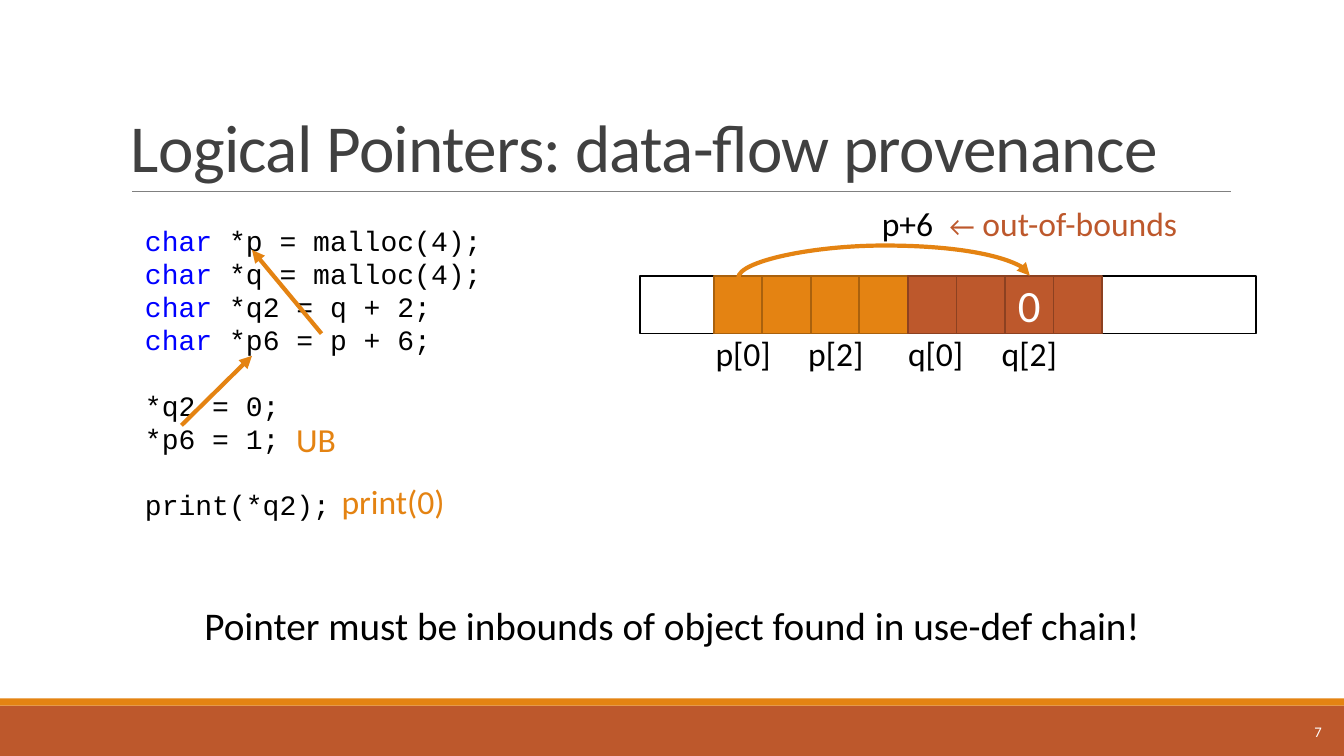
from dataclasses import dataclass

from lxml import etree
from pptx import Presentation
from pptx.dml.color import RGBColor
from pptx.enum.shapes import MSO_CONNECTOR, MSO_SHAPE
from pptx.enum.text import MSO_ANCHOR, PP_ALIGN
from pptx.oxml.ns import qn
from pptx.util import Inches, Pt

RECTANGLE = MSO_SHAPE.RECTANGLE
STRAIGHT, CURVE = MSO_CONNECTOR.STRAIGHT, MSO_CONNECTOR.CURVE
TOP, MIDDLE, BOTTOM = MSO_ANCHOR.TOP, MSO_ANCHOR.MIDDLE, MSO_ANCHOR.BOTTOM
LEFT, CENTER, RIGHT = PP_ALIGN.LEFT, PP_ALIGN.CENTER, PP_ALIGN.RIGHT

COLUMNS, ROWS = 160, 90


@dataclass(frozen=True)
class Theme:
    sans: str = "Calibri"
    mono: str = "Courier New"
    black: str = "000000"
    white: str = "FFFFFF"
    heading: str = "404040"
    rule: str = "808080"
    keyword: str = "0000FF"
    orange: str = "E48312"
    orange_edge: str = "A9610D"
    rust: str = "BD582C"
    rust_edge: str = "8C4121"
    title_size: float = 48
    value_size: float = 32
    message_size: float = 28
    label_size: float = 24
    code_size: float = 20
    number_size: float = 10.5
    code_line: float = 21.6
    code_gap: float = 2


THEME = Theme()


@dataclass(frozen=True)
class Span:
    text: str
    size: float = THEME.label_size
    color: str = THEME.black
    font: str = THEME.sans


@dataclass(frozen=True)
class Area:
    column: float
    row: float
    width: float
    height: float


@dataclass(frozen=True)
class Label:
    area: Area
    spans: tuple[Span, ...]
    wrap: bool = False
    anchor: MSO_ANCHOR = TOP
    align: PP_ALIGN = LEFT


@dataclass(frozen=True)
class Block:
    area: Area
    fill: str
    edge: str | None = None
    value: str = ""


@dataclass(frozen=True)
class Line:
    begin: tuple[float, float]
    end: tuple[float, float]
    color: str = THEME.orange
    weight: float = 3
    arrow: bool = True
    kind: MSO_CONNECTOR = STRAIGHT


@dataclass(frozen=True)
class CodeLine:
    keyword: str
    rest: str
    blank_after: bool = False


deck = Presentation()
deck.slide_width, deck.slide_height = Inches(13.33), Inches(7.5)
page = deck.slides.add_slide(deck.slide_layouts[6])


def across(columns: float) -> int:
    return round(deck.slide_width * columns / COLUMNS)


def down(rows: float) -> int:
    return round(deck.slide_height * rows / ROWS)


def place(area: Area) -> tuple[int, int, int, int]:
    return across(area.column), down(area.row), across(area.width), down(area.height)


def add_span(para, span: Span):
    run = para.add_run()
    run.text = span.text
    run.font.name = span.font
    run.font.size = Pt(span.size)
    run.font.color.rgb = RGBColor.from_string(span.color)
    return run


def draw_label(label: Label):
    box = page.shapes.add_textbox(*place(label.area))
    frame = box.text_frame
    frame.word_wrap = label.wrap
    frame.vertical_anchor = label.anchor
    para = frame.paragraphs[0]
    para.alignment = label.align
    for span in label.spans:
        add_span(para, span)
    return box


def draw_block(block: Block) -> None:
    box = page.shapes.add_shape(RECTANGLE, *place(block.area))
    box.shadow.inherit = False
    box.fill.solid()
    box.fill.fore_color.rgb = RGBColor.from_string(block.fill)
    if block.edge:
        box.line.color.rgb = RGBColor.from_string(block.edge)
        box.line.width = Pt(1.25)
    else:
        box.line.fill.background()
    if block.value:
        frame = box.text_frame
        frame.margin_left = frame.margin_right = 0
        frame.margin_top = frame.margin_bottom = 0
        frame.vertical_anchor = MIDDLE
        frame.paragraphs[0].alignment = CENTER
        add_span(frame.paragraphs[0], Span(block.value, THEME.value_size, THEME.white))


def draw_line(line: Line):
    connector = page.shapes.add_connector(
        line.kind, across(line.begin[0]), down(line.begin[1]),
        across(line.end[0]), down(line.end[1]))
    connector.line.color.rgb = RGBColor.from_string(line.color)
    connector.line.width = Pt(line.weight)
    properties = connector._element.spPr
    if line.arrow:
        etree.SubElement(properties.find(qn("a:ln")), qn("a:tailEnd"), type="triangle")
    etree.SubElement(properties, qn("a:effectLst"))
    return connector


def draw_jump(line: Line, bend: int) -> None:
    properties = draw_line(line)._element.spPr
    properties.find(qn("a:xfrm")).set("rot", "5400000")
    guides = properties.find(qn("a:prstGeom")).find(qn("a:avLst"))
    etree.SubElement(guides, qn("a:gd"), name="adj1", fmla=f"val {bend}")


def draw_code(area: Area, lines: tuple[CodeLine, ...]) -> None:
    frame = page.shapes.add_textbox(*place(area)).text_frame
    frame.word_wrap = True
    for index, line in enumerate(lines):
        para = frame.add_paragraph() if index else frame.paragraphs[0]
        skipped = THEME.code_line + THEME.code_gap if line.blank_after else 0
        para.line_spacing = Pt(THEME.code_line)
        para.space_after = Pt(THEME.code_gap + skipped)
        for text, color in ((line.keyword, THEME.keyword), (line.rest, THEME.black)):
            if text:
                add_span(para, Span(text, THEME.code_size, color, THEME.mono))


def main() -> None:
    draw_block(Block(Area(0, 84, COLUMNS, 6), THEME.rust))
    draw_block(Block(Area(0, 83.16, COLUMNS, 0.84), THEME.orange))
    draw_line(Line((15.72, 22.8), (146.52, 22.8), THEME.rule, 0.5, False))

    heading = Span("Logical Pointers: data-flow provenance", THEME.title_size, THEME.heading)
    title = draw_label(Label(Area(14.4, 3.72, 132, 19.08), (heading,), True, BOTTOM))
    para = title.text_frame.paragraphs[0]
    para.line_spacing = 0.85
    para.runs[0].font._element.set("spc", "-50")

    draw_code(Area(16.08, 26.4, 46.7, 40), (
        CodeLine("char", " *p = malloc(4);"),
        CodeLine("char", " *q = malloc(4);"),
        CodeLine("char", " *q2 = q + 2;"),
        CodeLine("char", " *p6 = p + 6;", True),
        CodeLine("", "*q2 = 0;"),
        CodeLine("", "*p6 = 1;", True),
        CodeLine("", "print(*q2);")))
    draw_line(Line((21.6, 50.64), (30, 42.36)))
    draw_line(Line((38.28, 39.72), (30, 29.76)))

    draw_block(Block(Area(76.2, 32.88, 73.32, 6.84), THEME.white, THEME.black))
    cell_width = 5.78
    for index in range(8):
        fill, edge = ((THEME.orange, THEME.orange_edge) if index < 4
                      else (THEME.rust, THEME.rust_edge))
        area = Area(84.96 + index * cell_width, 32.88, cell_width, 6.84)
        draw_block(Block(area, fill, edge, "0" if index == 6 else ""))
    draw_jump(Line((105.36, 50.28), (105.12, 15.6), kind=CURVE), 1590000)

    message = "Pointer must be inbounds of object found in use-def chain!"
    labels = [
        Label(Area(34.08, 49.32, 7.2, 6), (Span("UB", color=THEME.orange),)),
        Label(Area(39.48, 56.64, 14.76, 6), (Span("print(0)", color=THEME.orange),)),
        Label(Area(103.8, 23.52, 8.64, 6), (Span("p+6"),)),
        Label(Area(111.84, 23.52, 30.6, 6),
              (Span("←", THEME.code_size, THEME.rust),
               Span(" out-of-bounds", color=THEME.rust))),
        Label(Area(23.16, 71.04, 114.48, 6.84), (Span(message, THEME.message_size),), True),
        Label(Area(141.36, 84.72, 17.16, 4.8),
              (Span("7", THEME.number_size, THEME.white),), True, MIDDLE, RIGHT)]
    labels += [Label(Area(column, 39, 9.12, 6), (Span(name),)) for name, column in
               (("p[0]", 84), ("p[2]", 95.04), ("q[0]", 106.92), ("q[2]", 118.08))]
    for label in labels:
        draw_label(label)
    deck.save("out.pptx")


if __name__ == "__main__":
    main()
